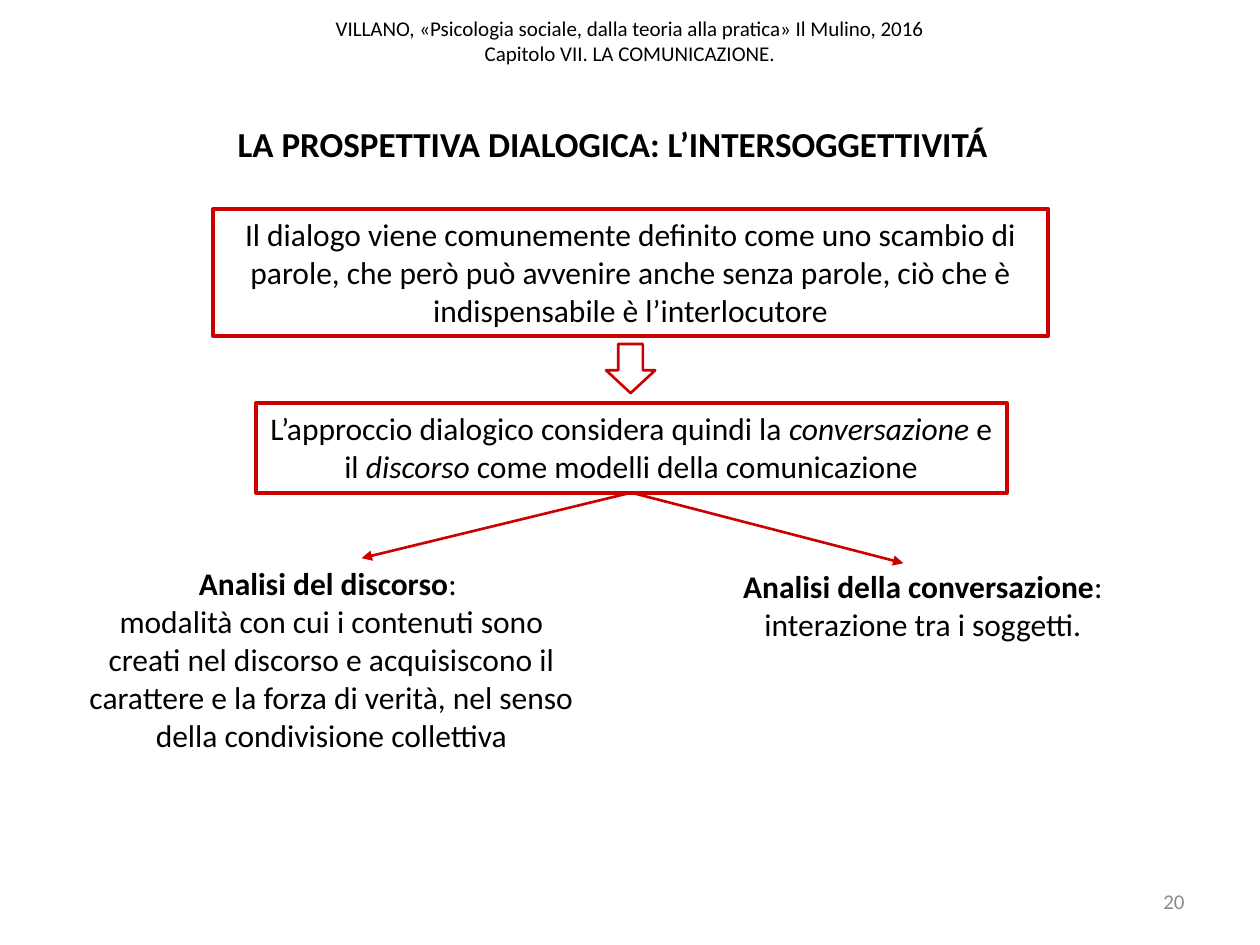
from dataclasses import dataclass, field

from lxml.etree import SubElement
from pptx import Presentation
from pptx.dml.color import RGBColor
from pptx.enum.shapes import MSO_CONNECTOR as Connector, MSO_SHAPE as Preset
from pptx.enum.text import MSO_ANCHOR as Anchor, PP_ALIGN as Align
from pptx.oxml.ns import qn
from pptx.util import Inches, Pt

COLORS = {"text": "000000", "accent": "CC0000", "number": "8C8C8C"}
BOLD = {"bold": True}
ITALIC = {"italic": True}


@dataclass
class Span:
    text: str
    style: dict = field(default_factory=dict)


@dataclass
class Block:
    box: tuple[float, float, float, float]
    paragraphs: list[list[Span]]
    size: int = 18
    color: str = "text"
    align: Align = Align.CENTER
    anchor: Anchor = Anchor.TOP
    wrap: bool = True
    framed: bool = False


@dataclass
class Arrow:
    start: tuple[float, float]
    end: tuple[float, float]


BLOCKS = [
    Block((0, 0, 10, 0.65), [[
        Span("VILLANO, «Psicologia sociale, dalla teoria alla pratica» Il Mulino, 2016\n"
             "Capitolo VII. LA COMUNICAZIONE.")]], size=12, anchor=Anchor.MIDDLE),
    Block((7.17, 6.95, 2.33, 0.4), [[Span("20")]], size=12, color="number",
          align=Align.RIGHT, anchor=Anchor.MIDDLE),
    Block((1.76, 0.92, 6.21, 0.44),
          [[Span("LA PROSPETTIVA DIALOGICA: L’INTERSOGGETTIVITÁ", BOLD)]],
          size=20, wrap=False),
    Block((1.69, 1.66, 6.63, 1.01), [[
        Span("Il dialogo viene comunemente definito come uno scambio di parole, "
             "che però può avvenire anche senza parole, ciò che è indispensabile "
             "è l’interlocutore")]], framed=True),
    Block((0.59, 4.43, 4.08, 1.62), [
        [Span("Analisi del discorso", BOLD), Span(": ")],
        [Span("modalità con cui i contenuti sono creati nel discorso e acquisiscono "
              "il carattere e la forza di verità, nel senso della condivisione "
              "collettiva")]]),
    Block((2.03, 3.2, 5.96, 0.71), [[
        Span("L’approccio dialogico considera quindi la "),
        Span("conversazione ", ITALIC),
        Span("e il "),
        Span("discorso ", ITALIC),
        Span("come modelli della comunicazione")]], framed=True),
    Block((5.71, 4.45, 3.23, 0.71), [
        [Span("Analisi della conversazione", BOLD), Span(":")],
        [Span("interazione tra i soggetti.")]]),
]
BRANCH_POINT = (5.01, 3.91)
BRANCHES = [Arrow(BRANCH_POINT, (2.87, 4.43)), Arrow(BRANCH_POINT, (7.17, 4.47))]


def rgb(name: str) -> RGBColor:
    return RGBColor.from_string(COLORS[name])


def outline(shape, width: float) -> None:
    shape.line.color.rgb = rgb("accent")
    shape.line.width = Pt(width)


def add_span(paragraph, span: Span, block: Block) -> None:
    """Add the span's text, turning each newline into a line break."""
    for index, line in enumerate(span.text.split("\n")):
        if index:
            paragraph.add_line_break()
        run = paragraph.add_run()
        run.text = line
        font_format = {"name": "Calibri", "size": Pt(block.size)} | span.style
        for attribute, value in font_format.items():
            setattr(run.font, attribute, value)
        run.font.color.rgb = rgb(block.color)


def add_block(slide, block: Block) -> None:
    textbox = slide.shapes.add_textbox(*map(Inches, block.box))
    if block.framed:
        outline(textbox, 2.25)
    frame = textbox.text_frame
    frame.word_wrap = block.wrap
    frame.vertical_anchor = block.anchor
    for index, spans in enumerate(block.paragraphs):
        paragraph = frame.add_paragraph() if index else frame.paragraphs[0]
        paragraph.alignment = block.align
        for span in spans:
            add_span(paragraph, span, block)


def add_down_arrow(slide) -> None:
    arrow = slide.shapes.add_shape(
        Preset.DOWN_ARROW, *map(Inches, (4.81, 2.73, 0.39, 0.39)))
    arrow.adjustments[0] = 0.5
    arrow.adjustments[1] = 0.465
    arrow.shadow.inherit = False
    arrow.fill.background()
    outline(arrow, 1.5)


def add_branch(slide, arrow: Arrow) -> None:
    branch = slide.shapes.add_connector(
        Connector.STRAIGHT, *map(Inches, arrow.start + arrow.end))
    outline(branch, 1.5)
    SubElement(branch.line._get_or_add_ln(), qn("a:tailEnd"), type="triangle")
    SubElement(branch._element.spPr, qn("a:effectLst"))


def main() -> None:
    deck = Presentation()
    deck.slide_width, deck.slide_height = Inches(10), Inches(7.5)
    slide = deck.slides.add_slide(deck.slide_layouts[6])
    for block in BLOCKS:
        add_block(slide, block)
    add_down_arrow(slide)
    for branch in BRANCHES:
        add_branch(slide, branch)
    deck.save("out.pptx")


if __name__ == "__main__":
    main()
